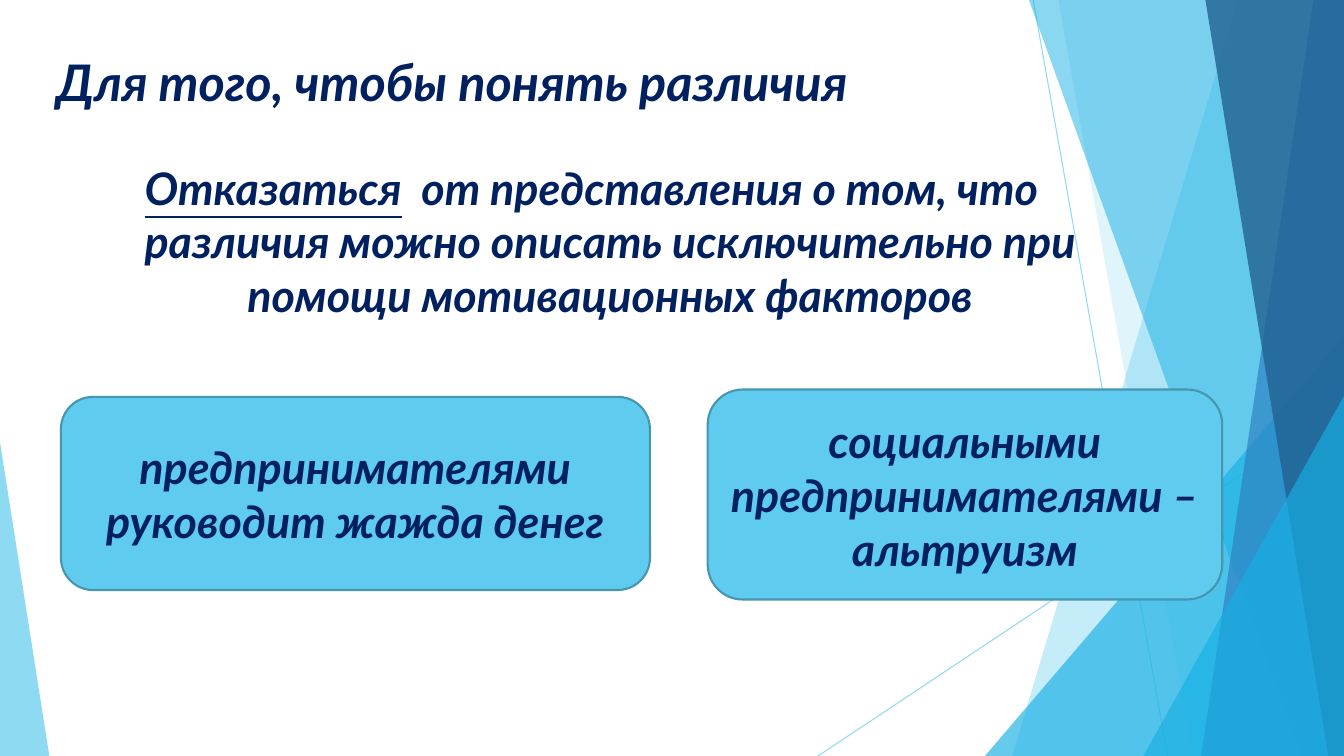
from dataclasses import dataclass

from lxml.etree import SubElement
from pptx import Presentation
from pptx.dml.color import RGBColor
from pptx.enum.shapes import MSO_CONNECTOR as Connector, MSO_SHAPE as Preset
from pptx.enum.text import MSO_ANCHOR as Anchor, PP_ALIGN as Align
from pptx.oxml.ns import qn
from pptx.util import Pt

EMU_PER_PX = 9525
WIDTH, HEIGHT = 1280, 720

SKY = RGBColor(0x5F, 0xCB, 0xEF)
CYAN = RGBColor(0x17, 0xB0, 0xE4)
BLUE = RGBColor(0x2E, 0x83, 0xC3)
DEEP_BLUE = RGBColor(0x22, 0x62, 0x92)
BORDER = RGBColor(0x46, 0x96, 0xB1)
NAVY = RGBColor(0x00, 0x20, 0x60)
FONT = "Lato"


@dataclass(frozen=True)
class Ray:
    start: tuple[int, int]
    end: tuple[int, int]


@dataclass(frozen=True)
class Band:
    """A full-height facet reaching the right edge of the slide."""
    top_x: int
    bottom_x: int
    color: RGBColor
    opacity: int


@dataclass(frozen=True)
class Wedge:
    """A right triangle standing on the bottom edge; apex 0 is left, 1 right."""
    left: int
    top: int
    width: int
    apex: int
    color: RGBColor
    opacity: int


@dataclass(frozen=True)
class Card:
    left: int
    top: int
    width: int
    height: int
    text: str


RAYS = [Ray((984, 0), (1112, HEIGHT)), Ray((WIDTH, 387), (779, HEIGHT))]
FACETS = [
    Band(1179, 964, SKY, 36),
    Band(1008, 1136, SKY, 20),
    Wedge(938, 320, 342, 1, CYAN, 66),
    Band(980, 1239, CYAN, 50),
    Band(1251, 1144, BLUE, 70),
    Band(1148, 1265, DEEP_BLUE, 80),
    Wedge(1089, 377, 191, 1, CYAN, 66),
    Wedge(0, 421, 47, 0, SKY, 70),
]
CARDS = [
    Card(58, 378, 561, 184, "предпринимателями руководит жажда денег"),
    Card(674, 371, 490, 200, "социальными предпринимателями – альтруизм"),
]


def px(*lengths: int) -> list[int]:
    return [length * EMU_PER_PX for length in lengths]


def set_opacity(shape, percent: int) -> None:
    for color in shape.element.spPr.iter(qn("a:srgbClr")):
        SubElement(color, qn("a:alpha"), val=str(percent * 1000))


def add_run(paragraph, text: str, size: int, underline: bool = False) -> None:
    run = paragraph.add_run()
    run.text = text
    font = run.font
    font.name, font.size = FONT, Pt(size)
    font.bold = font.italic = True
    font.underline = underline
    font.color.rgb = NAVY


def draw_ray(shapes, ray: Ray) -> None:
    connector = shapes.add_connector(Connector.STRAIGHT, *px(*ray.start, *ray.end))
    connector.line.color.rgb = SKY
    connector.line.width = Pt(0.75)
    set_opacity(connector, 70)
    SubElement(connector.element.spPr, qn("a:effectLst"))


def draw_facet(shapes, facet: Band | Wedge) -> None:
    if isinstance(facet, Band):
        builder = shapes.build_freeform(facet.top_x, 0, scale=EMU_PER_PX)
        builder.add_line_segments(
            [(WIDTH, 0), (WIDTH, HEIGHT), (facet.bottom_x, HEIGHT)], close=True)
        shape = builder.convert_to_shape()
    else:
        shape = shapes.add_shape(
            Preset.ISOSCELES_TRIANGLE,
            *px(facet.left, facet.top, facet.width, HEIGHT - facet.top))
        shape.adjustments[0] = facet.apex
    shape.shadow.inherit = False
    shape.fill.solid()
    shape.fill.fore_color.rgb = facet.color
    shape.line.fill.background()
    set_opacity(shape, facet.opacity)


def draw_card(shapes, card: Card) -> None:
    shape = shapes.add_shape(
        Preset.ROUNDED_RECTANGLE, *px(card.left, card.top, card.width, card.height))
    shape.shadow.inherit = False
    shape.fill.solid()
    shape.fill.fore_color.rgb = SKY
    shape.line.color.rgb = BORDER
    shape.line.width = Pt(1.5)
    frame = shape.text_frame
    frame.word_wrap = True
    frame.vertical_anchor = Anchor.MIDDLE
    paragraph = frame.paragraphs[0]
    paragraph.alignment = Align.CENTER
    add_run(paragraph, card.text, 32)


def draw_title(title) -> None:
    title.left, title.top, title.width, title.height = px(44, 44, 929, 98)
    title.text_frame.vertical_anchor = Anchor.TOP
    paragraph = title.text_frame.paragraphs[0]
    paragraph.alignment = Align.LEFT
    add_run(paragraph, "Для того, чтобы понять различия", 36)
    # Bring the title in front of the decoration
    title.element.getparent().append(title.element)


def draw_statement(shapes) -> None:
    frame = shapes.add_textbox(*px(52, 148, 1023, 487)).text_frame
    frame.word_wrap = True
    paragraph = frame.paragraphs[0]
    paragraph.alignment = Align.CENTER
    paragraph.space_before = Pt(10)
    # Hanging indent
    indent = px(36)[0]
    properties = paragraph._p.get_or_add_pPr()
    properties.set("marL", str(indent))
    properties.set("indent", str(-indent))
    add_run(paragraph, "Отказаться", 32, underline=True)
    add_run(paragraph, "  от представления о том, что различия можно описать "
                       "исключительно при помощи мотивационных факторов", 32)


def main() -> None:
    presentation = Presentation()
    presentation.slide_width, presentation.slide_height = px(WIDTH, HEIGHT)
    slide = presentation.slides.add_slide(presentation.slide_layouts[5])
    shapes = slide.shapes

    # Faceted background
    for ray in RAYS:
        draw_ray(shapes, ray)
    for facet in FACETS:
        draw_facet(shapes, facet)

    # Content
    draw_title(shapes.title)
    draw_statement(shapes)
    for card in CARDS:
        draw_card(shapes, card)

    presentation.save("out.pptx")


if __name__ == "__main__":
    main()
